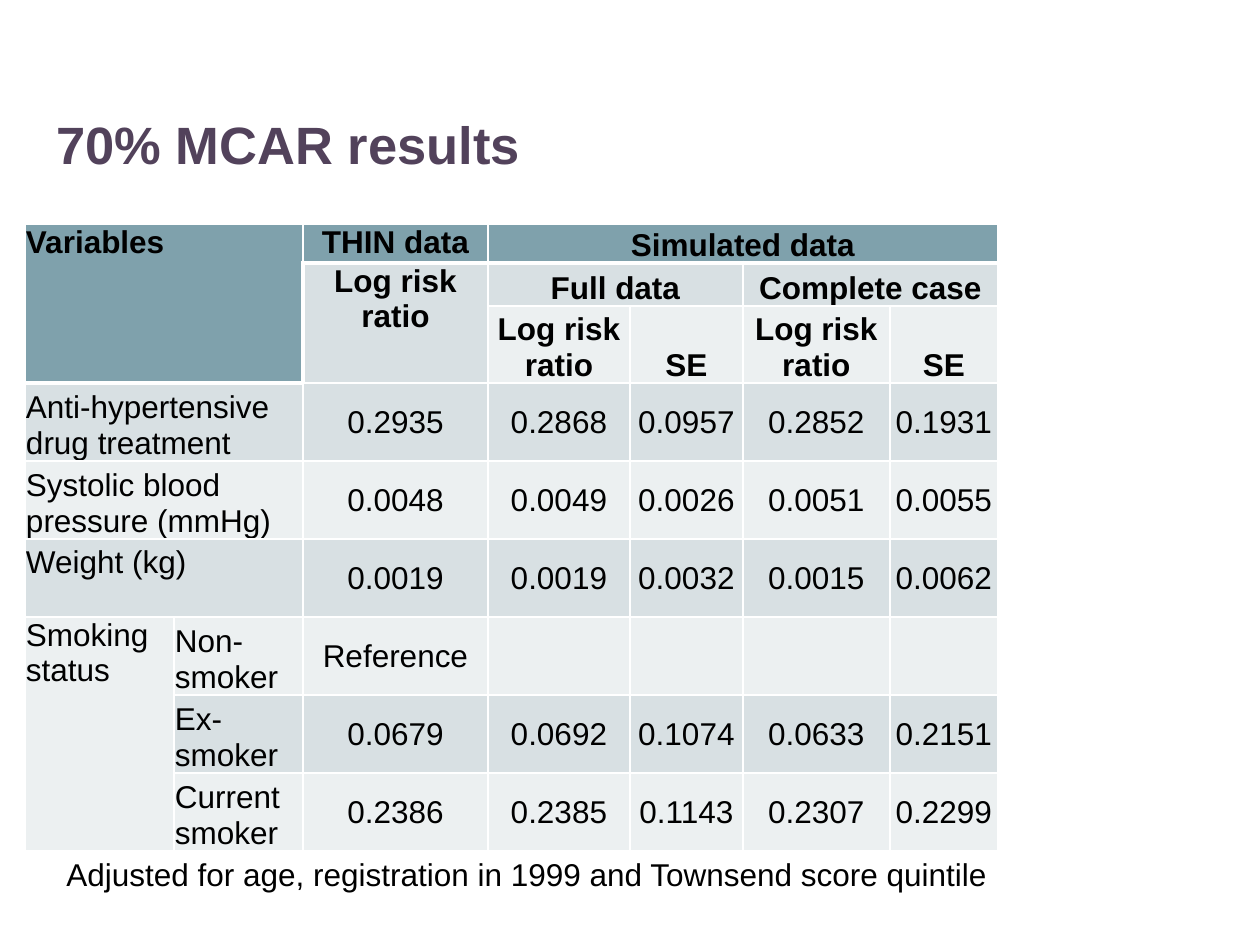
from lxml import etree
from pptx import Presentation
from pptx import util as u
from pptx.dml.color import RGBColor
from pptx.enum import text
from pptx.oxml import ns

PX = 914400 / 126
FONT = "Arial"
COLORS = {
    "title": "52425B",
    "text": "000000",
    "header": "7FA1AC",
    "dark_band": "D8E0E3",
    "light_band": "ECF0F1",
    "border": "FFFFFF",
}
COLUMN_WIDTHS = [149, 129, 185, 142, 113, 147, 108]
ROW_HEIGHTS = [39, 43, 77] + [78] * 6
HEADER_ROWS = 3
LABEL_COLUMNS = 2
ROWS = [
    ["Variables", "", "THIN data", "Simulated data", "", "", ""],
    ["", "", "Log risk ratio", "Full data", "", "Complete case", ""],
    ["", "", "", "Log risk ratio", "SE", "Log risk ratio", "SE"],
    ["Anti-hypertensive drug treatment", "", "0.2935", "0.2868", "0.0957", "0.2852", "0.1931"],
    ["Systolic blood pressure (mmHg)", "", "0.0048", "0.0049", "0.0026", "0.0051", "0.0055"],
    ["Weight (kg)", "", "0.0019", "0.0019", "0.0032", "0.0015", "0.0062"],
    ["Smoking status", "Non-smoker", "Reference", "", "", "", ""],
    ["", "Ex-smoker", "0.0679", "0.0692", "0.1074", "0.0633", "0.2151"],
    ["", "Current smoker", "0.2386", "0.2385", "0.1143", "0.2307", "0.2299"],
]
# Opposite corners (row, column) of each merged block
MERGES = [
    ((0, 0), (2, 1)), ((0, 3), (0, 6)), ((1, 2), (2, 2)), ((1, 3), (1, 4)),
    ((1, 5), (1, 6)), ((3, 0), (3, 1)), ((4, 0), (4, 1)), ((5, 0), (5, 1)),
    ((6, 0), (8, 0)),
]
WEIGHT, SMOKING = (5, 0), (6, 0)


def px(length):
    return u.Emu(round(length * PX))


def format_font(paragraph, size, color, bold=False):
    values = {"name": FONT, "size": u.Pt(size), "bold": bold}
    for key, value in values.items():
        setattr(paragraph.font, key, value)
    paragraph.font.color.rgb = RGBColor.from_string(COLORS[color])


def add_line_of_text(slide, box, wording, size, color, bold=False):
    frame = slide.shapes.add_textbox(*map(px, box)).text_frame
    frame.word_wrap = True
    frame.text = wording
    format_font(frame.paragraphs[0], size, color, bold)


def border_widths(row, column):
    """Points per side: thick under the header and around its corner, thin elsewhere."""
    is_label = column < LABEL_COLUMNS
    beside_corner = 0 < row < HEADER_ROWS
    last_header = HEADER_ROWS - 1 if is_label else 0
    thick = {
        "L": beside_corner and column == LABEL_COLUMNS,
        "R": beside_corner and column == LABEL_COLUMNS - 1,
        "T": row == last_header + 1,
        "B": row == last_header,
    }
    return {side: 3 if is_thick else 1 for side, is_thick in thick.items()}


def add_borders(cell, widths):
    properties = cell._tc.get_or_add_tcPr()
    for side, width in widths.items():
        line = etree.SubElement(properties, ns.qn(f"a:ln{side}"), w=str(u.Pt(width)))
        fill = etree.SubElement(line, ns.qn("a:solidFill"))
        etree.SubElement(fill, ns.qn("a:srgbClr"), val=COLORS["border"])


def band_color(row):
    if row == 0:
        return "header"
    return "dark_band" if row % 2 else "light_band"


def cell_anchor(row, column):
    if row < HEADER_ROWS:
        at_top = column <= LABEL_COLUMNS
    else:
        at_top = (row, column) in (WEIGHT, SMOKING)
    if at_top:
        return text.MSO_ANCHOR.TOP
    if row < HEADER_ROWS or column < LABEL_COLUMNS:
        return text.MSO_ANCHOR.BOTTOM
    return text.MSO_ANCHOR.MIDDLE


def fill_cell(cell, row, column, wording):
    cell.fill.solid()
    cell.fill.fore_color.rgb = RGBColor.from_string(COLORS[band_color(row)])
    values = {
        "margin_left": px(1),
        "margin_right": px(1),
        "margin_top": px(6 if (row, column) == WEIGHT else 1),
        "margin_bottom": 0,
        "vertical_anchor": cell_anchor(row, column),
    }
    for key, value in values.items():
        setattr(cell, key, value)
    cell.text = wording
    paragraph = cell.text_frame.paragraphs[0]
    if column >= LABEL_COLUMNS:
        paragraph.alignment = text.PP_ALIGN.CENTER
    format_font(paragraph, 18, "text", bold=row < HEADER_ROWS)


def add_results_table(slide, left, top):
    box = (left, top, sum(COLUMN_WIDTHS), sum(ROW_HEIGHTS))
    results = slide.shapes.add_table(len(ROWS), len(COLUMN_WIDTHS), *map(px, box)).table
    results.first_row = results.horz_banding = False
    for column, width in zip(results.columns, COLUMN_WIDTHS):
        column.width = px(width)
    for row, height in zip(results.rows, ROW_HEIGHTS):
        row.height = px(height)
    for first, last in MERGES:
        results.cell(*first).merge(results.cell(*last))
    for row, wordings in enumerate(ROWS):
        for column, wording in enumerate(wordings):
            cell = results.cell(row, column)
            add_borders(cell, border_widths(row, column))
            if not cell.is_spanned:
                fill_cell(cell, row, column, wording)


def build_results_slide(deck):
    slide = deck.slides.add_slide(deck.slide_layouts[6])
    add_line_of_text(slide, (44, 106, 1169, 149), "70% MCAR results", 30, "title", bold=True)
    add_results_table(slide, 25, 224)
    add_line_of_text(
        slide, (54, 849, 1002, 50),
        "Adjusted for age, registration in 1999 and Townsend score quintile", 18, "text",
    )


def main():
    deck = Presentation()
    deck.slide_width, deck.slide_height = px(1260), px(945)
    build_results_slide(deck)
    deck.save("out.pptx")


if __name__ == "__main__":
    main()
